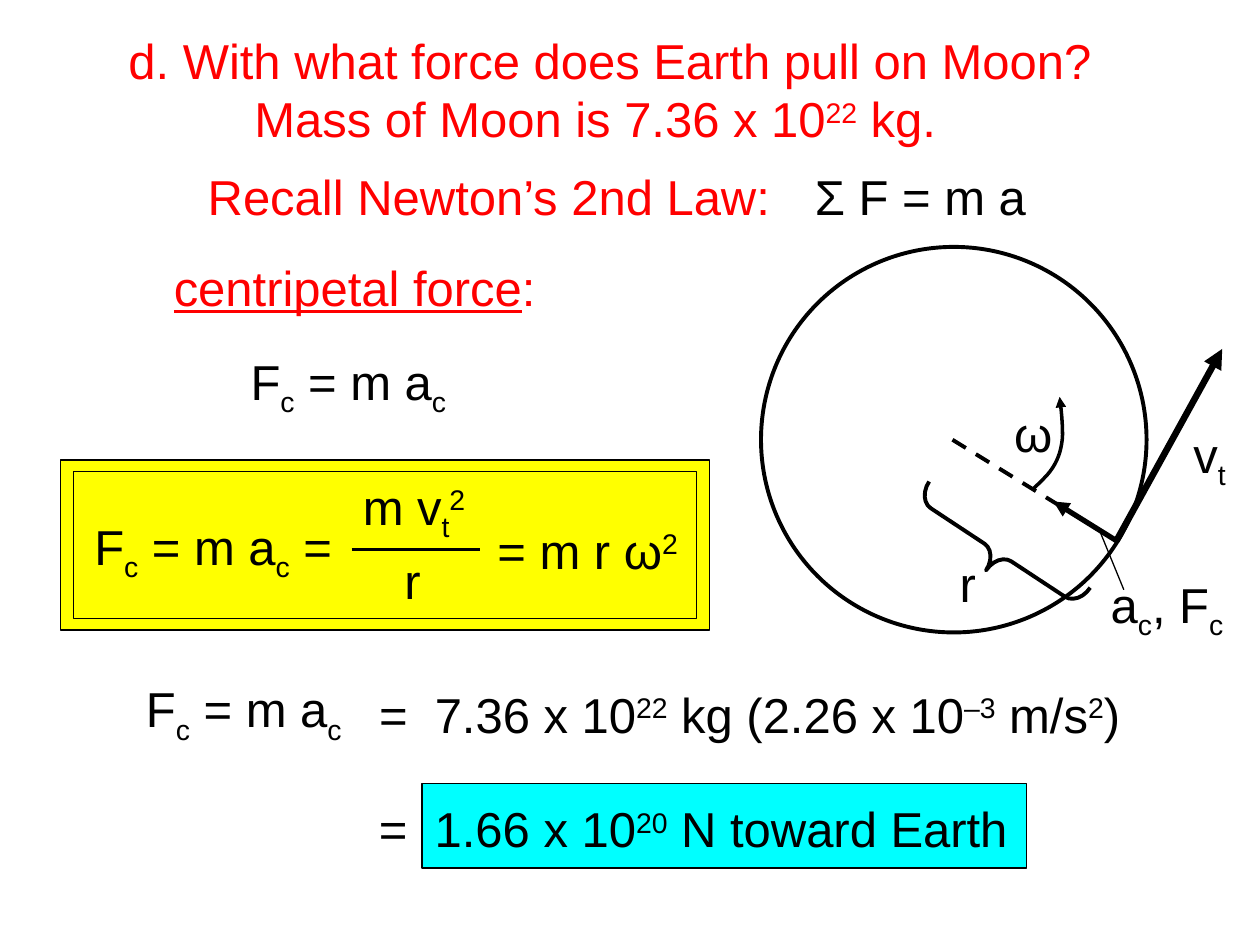
import pptx
import pptx.util
import pptx.dml.color
import pptx.enum.dml
import pptx.enum.shapes
import pptx.enum.text
import pptx.oxml.ns
import lxml.etree

Pt = pptx.util.Pt
KIND = pptx.enum.shapes.MSO_SHAPE
ALIGN = pptx.enum.text.PP_ALIGN
ANCHOR = pptx.enum.text.MSO_ANCHOR
FIT = pptx.enum.text.MSO_AUTO_SIZE

HUES = {"ink": "000000", "red": "FF0000", "gold": "FFFF00", "cyan": "00FFFF"}
SHIFT = {"_": "-25000", "^": "30000"}
ROW = 41      # height of a one-line text
LABEL = 49    # height of a diagram label

# Formulas: a part that starts with _ is a subscript, with ^ a superscript
FORCE = ["F", "_c", " = m a", "_c"]


def hue(name):
    return pptx.dml.color.RGBColor.from_string(HUES[name])


def write(para, parts, color="ink"):
    """Add the parts of a formula or sentence as runs."""
    for part in parts:
        mark = part[0] if part[0] in SHIFT else ""
        run = para.add_run()
        run.text = part[len(mark):]
        run.font.size = Pt(28)
        run.font.name = "Arial"
        run.font.color.rgb = hue(color)
        if mark:
            run._r.get_or_add_rPr().set("baseline", SHIFT[mark])


def add_text(slide, x, y, w, parts, color="ink", align=ALIGN.LEFT):
    """One unwrapped line of text."""
    frame = slide.shapes.add_textbox(Pt(x), Pt(y), Pt(w), Pt(ROW)).text_frame
    frame.word_wrap = False
    frame.auto_size = FIT.SHAPE_TO_FIT_TEXT
    frame.vertical_anchor = ANCHOR.MIDDLE
    para = frame.paragraphs[0]
    para.alignment = align
    write(para, parts, color)
    return para


def add_label(slide, x, y, parts, w=LABEL):
    """A centred label in the diagram."""
    frame = slide.shapes.add_textbox(Pt(x), Pt(y), Pt(w), Pt(LABEL)).text_frame
    frame.word_wrap = True
    frame.paragraphs[0].alignment = ALIGN.CENTER
    write(frame.paragraphs[0], parts)


def add_form(slide, kind, x, y, w, h, width, fill=None):
    """A preset shape with a black outline."""
    form = slide.shapes.add_shape(kind, Pt(x), Pt(y), Pt(w), Pt(h))
    form.shadow.inherit = False
    if fill:
        form.fill.solid()
        form.fill.fore_color.rgb = hue(fill)
    else:
        form.fill.background()
    ink_line(form, width)
    return form


def ink_line(form, width, arrow=False):
    form.line.color.rgb = hue("ink")
    form.line.width = Pt(width)
    if arrow:
        tag = pptx.oxml.ns.qn("a:tailEnd")
        lxml.etree.SubElement(form.line._get_or_add_ln(), tag, type="triangle")


def add_line(slide, start, end, width, arrow=False):
    ends = [Pt(v) for v in (*start, *end)]
    line = slide.shapes.add_connector(pptx.enum.shapes.MSO_CONNECTOR.STRAIGHT, *ends)
    ink_line(line, width, arrow)
    lxml.etree.SubElement(line._element.spPr, pptx.oxml.ns.qn("a:effectLst"))
    return line


def add_curve(slide, start, curves, width, steps=8):
    """An open chain of cubic curves that ends in an arrowhead."""
    dots, last = [], start
    for one, two, end in curves:
        for n in range(1, steps + 1):
            t = n / steps
            u = 1 - t
            dots.append(tuple(
                Pt(u**3 * a + 3 * u * u * t * b + 3 * u * t * t * c + t**3 * d)
                for a, b, c, d in zip(last, one, two, end)))
        last = end
    pen = slide.shapes.build_freeform(Pt(start[0]), Pt(start[1]))
    pen.add_line_segments(dots, close=False)
    curve = pen.convert_to_shape()
    curve.shadow.inherit = False
    curve.fill.background()
    ink_line(curve, width, arrow=True)


def add_title(slide):
    title = slide.shapes.title
    title.left, title.top, title.width, title.height = Pt(66.2), Pt(13.7), Pt(566), Pt(74.2)
    frame = title.text_frame
    frame.word_wrap = False
    frame.auto_size = FIT.NONE
    frame.vertical_anchor = ANCHOR.MIDDLE
    first, second = frame.paragraphs[0], frame.add_paragraph()
    first.alignment = second.alignment = ALIGN.LEFT
    write(first, ["d. With what force does Earth pull on Moon?"], "red")
    write(second, ["Mass of Moon is 7.36 x 10", "^22", " kg."], "red")
    second._p.get_or_add_pPr().set("marL", str(Pt(72)))


def add_orbit(slide):
    moon = (638, 309)
    add_form(slide, KIND.OVAL, 434.9, 141.1, 220.3, 220.3, 2.25)
    # Radius, velocity and acceleration
    dash = add_line(slide, (544.3, 251.3), moon, 2.25)
    dash.line.dash_style = pptx.enum.dml.MSO_LINE.DASH
    add_line(slide, moon, (698.4, 199.4), 3.75, arrow=True)
    add_line(slide, moon, (602, 286.6), 3, arrow=True)
    # Direction of turning
    add_curve(slide, (590.4, 279.4), [
        ((592.6, 277.2), (598.3, 272.2), (601.2, 267.8)),
        ((604.1, 263.5), (606.2, 258.5), (607, 251.3)),
        ((607.7, 244.8), (606.2, 231.8), (605.5, 226.8))], 2)
    # Brace along the radius
    brace = add_form(slide, KIND.LEFT_BRACE, 558, 260.6, 24.5, 110.2, 2.25)
    brace.adjustments[0] = 0.376
    brace.rotation = 303.4
    add_line(slide, (642.2, 337), (628.6, 303.8), 0.75)
    # Labels
    add_label(slide, 528.5, 312.5, ["r"])
    add_label(slide, 565.9, 226.8, ["ω"])
    add_label(slide, 666.7, 239, ["v", "_t"])
    add_label(slide, 617.8, 324.7, ["a", "_c", ", F", "_c"], w=98)


def add_rule(slide):
    """The framed formula with its fraction."""
    add_form(slide, KIND.RECTANGLE, 34.6, 262.8, 370.8, 97.2, 0.75, "gold")
    add_form(slide, KIND.RECTANGLE, 41.8, 269.3, 356.4, 84.2, 0.75, "gold")
    add_text(slide, 46.8, 293.8, 167, FORCE + [" ="])
    add_text(slide, 200.2, 270.7, 75.6, ["m v", "_t", "^2"])
    add_line(slide, (200.9, 314), (274.3, 314), 2.25)
    add_text(slide, 223.9, 311, 23.8, ["r"], align=ALIGN.CENTER)
    add_text(slide, 277.2, 293.8, 117.4, ["= m r ω", "^2"])


def add_answer(slide):
    add_form(slide, KIND.RECTANGLE, 241.2, 447.8, 345.6, 48.2, 0.75, "cyan")
    add_text(slide, 76.3, 386.6, 130.3, FORCE)
    add_text(slide, 209.5, 387.4, 450, [
        "=  7.36 x 10", "^22", " kg (2.26 x 10", "^–3", " m/s", "^2", ")"])
    add_text(slide, 209.5, 452.9, 388.8, ["=  1.66 x 10", "^20", " N toward Earth"])


def main():
    deck = pptx.Presentation()
    deck.slide_width, deck.slide_height = Pt(720), Pt(540)
    slide = deck.slides.add_slide(deck.slide_layouts[5])
    add_title(slide)
    # Laws to recall
    add_text(slide, 111.6, 91.4, 339.8, ["Recall Newton’s 2nd Law:"], "red")
    add_text(slide, 458.6, 91.4, 144, ["Σ F = m a"])
    head = add_text(slide, 92.2, 143.3, 229.7, ["centripetal force", ":"], "red")
    head.runs[0].font.underline = True
    add_text(slide, 136.1, 199.4, 130.3, FORCE)
    add_orbit(slide)
    add_rule(slide)
    add_answer(slide)
    deck.save("out.pptx")


if __name__ == "__main__":
    main()
